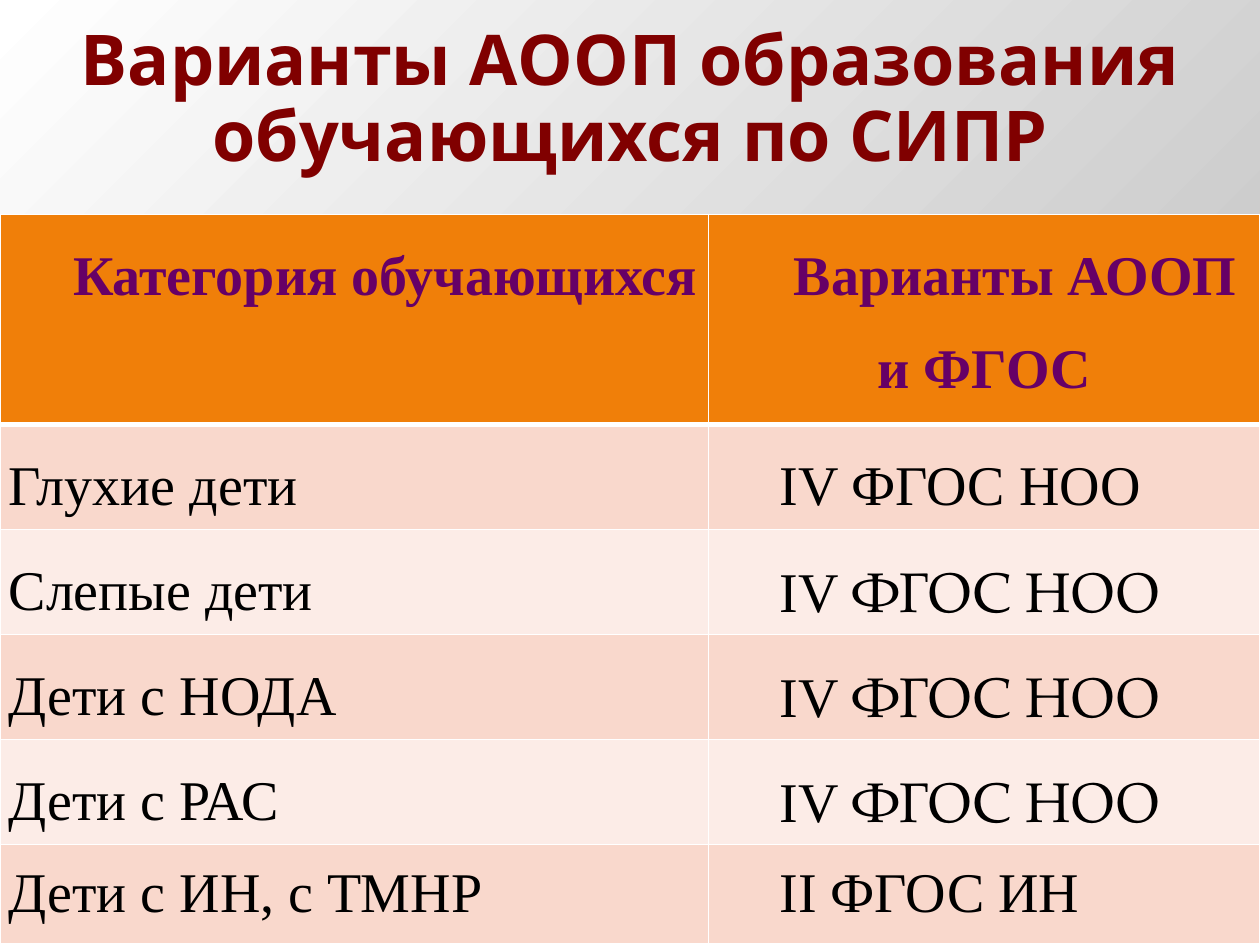
from dataclasses import dataclass

from lxml.etree import SubElement
from pptx import Presentation
from pptx.dml.color import RGBColor
from pptx.enum.text import MSO_ANCHOR as Anchor, MSO_AUTO_SIZE as AutoSize, PP_ALIGN as Align
from pptx.oxml import parse_xml
from pptx.oxml.ns import nsdecls, qn
from pptx.util import Pt


@dataclass(frozen=True)
class Theme:
    title: str = "800000"
    heading: str = "660066"
    body: str = "000000"
    header_fill: str = "F07F09"
    bands: tuple = ("F9D8CC", "FCECE7")
    border: str = "FFFFFF"
    backdrop: tuple = ("FFFFFF", "B4B4B4")
    title_size: int = 40
    table_size: int = 32
    title_font: str = "Noto Sans"
    serif: str = "Times New Roman"
    book: str = "TeX Gyre Pagella"


THEME = Theme()
HEADINGS = ("Категория обучающихся", "Варианты АООП и ФГОС")
STANDARD = ("IV", " ФГОС НОО")
ROWS = (
    ("Глухие дети", ("IV ФГОС НОО",)),
    ("Слепые дети", STANDARD),
    ("Дети с НОДА", STANDARD),
    ("Дети с РАС", STANDARD),
    ("Дети с ИН, с ТМНР", ("II ФГОС ИН",)),
)
COLUMN_WIDTHS = (405, 315)
ROW_HEIGHTS = (120, 60, 60, 60, 60, 57)


def write(para, text, *, size=THEME.table_size, font=THEME.serif, color=THEME.body,
          bold=False, align=Align.LEFT, spacing=1.5, indent=0):
    para.alignment = align
    para.line_spacing = spacing
    para.space_before = para.space_after = Pt(0)
    if indent:
        para._p.get_or_add_pPr().set("indent", str(Pt(indent)))
    span = para.add_run()
    span.text = text
    span.font.size = Pt(size)
    span.font.name = font
    span.font.bold = bold
    span.font.color.rgb = RGBColor.from_string(color)


def paint_background(page):
    fill = page.background.fill
    fill.gradient()
    for stop, color, position in zip(fill.gradient_stops, THEME.backdrop, (0, 1)):
        stop.color.rgb = RGBColor.from_string(color)
        stop.position = position
    gradient = page._element.find(".//" + qn("a:gradFill"))
    linear = gradient.find(qn("a:lin"))
    radial = parse_xml(
        f'<a:path {nsdecls("a")} path="circle"><a:fillToRect r="100000" b="100000"/></a:path>')
    gradient.replace(linear, radial)


def place_title(page, left, top, width, height):
    title = page.shapes.title
    title.left, title.top, title.width, title.height = map(Pt, (left, top, width, height))
    frame = title.text_frame
    frame.word_wrap = True
    frame.auto_size = AutoSize.NONE
    frame.vertical_anchor = Anchor.MIDDLE
    write(frame.paragraphs[0], "Варианты АООП образования обучающихся по СИПР",
          size=THEME.title_size, font=THEME.title_font, color=THEME.title,
          bold=True, align=Align.CENTER, spacing=0.9)


def style_cell(cell, fill, top=1, bottom=1):
    cell.margin_left = cell.margin_right = Pt(5)
    cell.margin_top = cell.margin_bottom = Pt(0)
    properties = cell._tc.get_or_add_tcPr()
    for side, width in (("L", 1), ("R", 1), ("T", top), ("B", bottom)):
        line = SubElement(properties, qn(f"a:ln{side}"), w=str(Pt(width)))
        SubElement(SubElement(line, qn("a:solidFill")), qn("a:srgbClr"), val=THEME.border)
    cell.fill.solid()
    cell.fill.fore_color.rgb = RGBColor.from_string(fill)


def place_table(page, left, top, width, height):
    table = page.shapes.add_table(
        len(ROW_HEIGHTS), len(COLUMN_WIDTHS), Pt(left), Pt(top), Pt(width), Pt(height)).table
    for column, size in zip(table.columns, COLUMN_WIDTHS):
        column.width = Pt(size)
    for row, size in zip(table.rows, ROW_HEIGHTS):
        row.height = Pt(size)

    for column, heading in enumerate(HEADINGS):
        cell = table.cell(0, column)
        style_cell(cell, THEME.header_fill, bottom=3)
        write(cell.text_frame.paragraphs[0], heading, color=THEME.heading,
              bold=True, align=Align.CENTER, indent=35.4)

    for index, (category, variant) in enumerate(ROWS, 1):
        spacing = 1.3 if index == len(ROWS) else 1.5
        cells = [table.cell(index, column) for column in range(2)]
        for cell in cells:
            style_cell(cell, THEME.bands[(index - 1) % 2], top=3 if index == 1 else 1)
        write(cells[0].text_frame.paragraphs[0], category, spacing=spacing)
        for part, font in zip(variant, (THEME.serif, THEME.book)):
            write(cells[1].text_frame.paragraphs[0], part, font=font,
                  spacing=spacing, indent=35.4)


def main():
    deck = Presentation()
    deck.slide_width, deck.slide_height = Pt(720), Pt(540)
    page = deck.slides.add_slide(deck.slide_layouts[5])
    paint_background(page)
    place_title(page, 0, 21, 720, 73)
    place_table(page, 0, 122.5, sum(COLUMN_WIDTHS), sum(ROW_HEIGHTS))
    deck.save("out.pptx")


if __name__ == "__main__":
    main()
